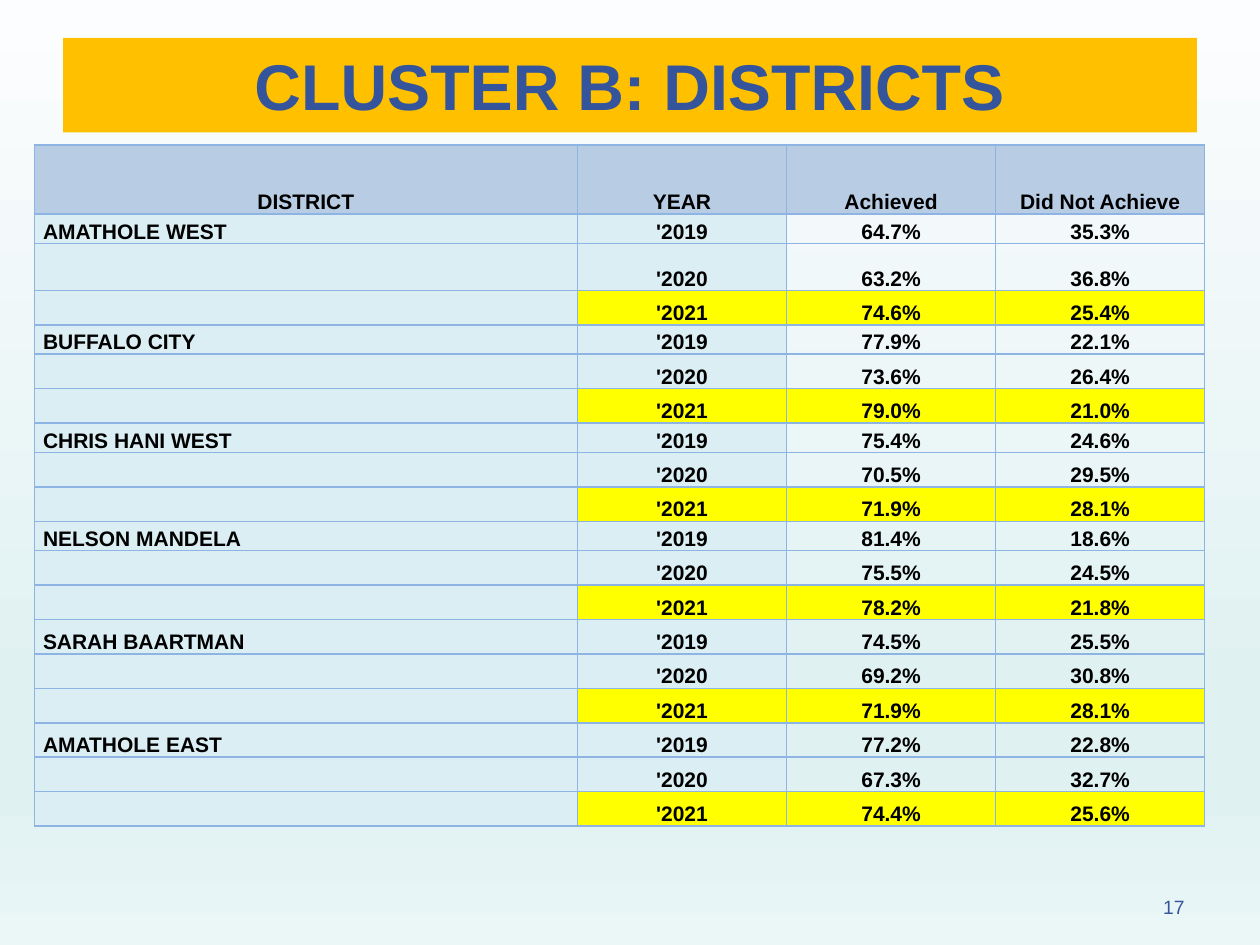
from dataclasses import dataclass
from typing import Optional

from pptx import Presentation
from pptx.dml.color import RGBColor
from pptx.enum.text import MSO_ANCHOR as Anchor, MSO_AUTO_SIZE as AutoSize, PP_ALIGN as Align
from pptx.oxml import parse_xml
from pptx.oxml.ns import nsdecls
from pptx.oxml.xmlchemy import OxmlElement
from pptx.util import Pt


@dataclass(frozen=True)
class Theme:
    font: str = "Arial"
    ink: str = "000000"
    accent: str = "34549C"
    banner: str = "FFC000"
    header: str = "B8CCE4"
    label: str = "DAEEF3"
    latest: str = "FFFF00"
    border: str = "8DB4E2"
    title_size: float = 36.9
    cell_size: float = 12
    number_size: float = 11
    backdrop: tuple = ((0, "FCFDFE"), (74, "E0F1F2"), (83, "E0F1F2"), (100, "EBF6F7"))


@dataclass(frozen=True)
class District:
    name: str
    achieved: tuple
    missed: tuple
    heights: tuple = (19.7, 19.7, 19.7)


THEME = Theme()
SHORT_FIRST = (16.8, 19.7, 19.7)
HEADINGS = ("DISTRICT", "YEAR", "Achieved", "Did Not Achieve")
YEARS = ("'2019", "'2020", "'2021")
COLUMN_WIDTHS = (310.4, 119.5, 119.5, 119.5)
HEADER_HEIGHT = 39.6
DISTRICTS = (
    District("AMATHOLE WEST", (64.7, 63.2, 74.6), (35.3, 36.8, 25.4), (16.8, 26.8, 19.7)),
    District("BUFFALO CITY", (77.9, 73.6, 79.0), (22.1, 26.4, 21.0), SHORT_FIRST),
    District("CHRIS HANI WEST", (75.4, 70.5, 71.9), (24.6, 29.5, 28.1), SHORT_FIRST),
    District("NELSON MANDELA", (81.4, 75.5, 78.2), (18.6, 24.5, 21.8), SHORT_FIRST),
    District("SARAH BAARTMAN", (74.5, 69.2, 71.9), (25.5, 30.8, 28.1)),
    District("AMATHOLE EAST", (77.2, 67.3, 74.4), (22.8, 32.7, 25.6)),
)


def write_text(frame, text: str, *, size: float, color: str = THEME.ink, bold: bool = False,
               align: Align = Align.CENTER, spacing: float = 1.0, after: float = 0) -> None:
    """Write one formatted paragraph into a text frame."""
    paragraph = frame.paragraphs[0]
    paragraph.alignment = align
    paragraph.line_spacing = spacing
    paragraph.space_after = Pt(after)
    if not text:
        ending = OxmlElement("a:endParaRPr")
        ending.set("sz", str(int(size * 100)))
        paragraph._p.append(ending)
        return
    run = paragraph.add_run()
    run.text = text
    run.font.name = THEME.font
    run.font.size = Pt(size)
    run.font.bold = bold
    run.font.color.rgb = RGBColor.from_string(color)


def paint_backdrop(slide) -> None:
    """Fill the slide background with the vertical gradient."""
    stops = "".join(f'<a:gs pos="{position * 1000}"><a:srgbClr val="{color}"/></a:gs>'
                    for position, color in THEME.backdrop)
    background = parse_xml(
        f'<p:bg {nsdecls("p", "a")}><p:bgPr><a:gradFill rotWithShape="1"><a:gsLst>{stops}</a:gsLst>'
        '<a:lin ang="5400000" scaled="0"/></a:gradFill><a:effectLst/></p:bgPr></p:bg>')
    slide.element.cSld.insert(0, background)


def add_title(slide, text: str) -> None:
    """Format the title placeholder as a banner."""
    title = slide.shapes.title
    title.left, title.top, title.width, title.height = Pt(36), Pt(21.6), Pt(648), Pt(54)
    title.fill.solid()
    title.fill.fore_color.rgb = RGBColor.from_string(THEME.banner)
    frame = title.text_frame
    frame.auto_size = AutoSize.NONE
    frame.vertical_anchor = Anchor.MIDDLE
    write_text(frame, text, size=THEME.title_size, color=THEME.accent, bold=True)


def format_cell(cell, text: str, fill: Optional[str], align: Align) -> None:
    """Write, border and fill one table cell."""
    cell.vertical_anchor = Anchor.BOTTOM
    cell.margin_left = cell.margin_right = Pt(5)
    cell.margin_top = cell.margin_bottom = Pt(0)
    write_text(cell.text_frame, text, size=THEME.cell_size, bold=True, align=align, spacing=1.07)
    properties = cell._tc.get_or_add_tcPr()
    for side in "LRTB":
        properties.append(parse_xml(
            f'<a:ln{side} {nsdecls("a")} w="{Pt(1)}"><a:solidFill>'
            f'<a:srgbClr val="{THEME.border}"/></a:solidFill></a:ln{side}>'))
    if fill:
        cell.fill.solid()
        cell.fill.fore_color.rgb = RGBColor.from_string(fill)
    else:
        cell.fill.background()


def add_results(slide) -> None:
    """Add the table of results by district and year."""
    rows = [(HEADINGS, (THEME.header,) * 4, HEADER_HEIGHT)]
    for district in DISTRICTS:
        for index, year in enumerate(YEARS):
            latest = year == YEARS[-1]
            year_fill, rate_fill = (THEME.latest,) * 2 if latest else (THEME.label, None)
            texts = (district.name if index == 0 else "", year,
                     f"{district.achieved[index]:.1f}%", f"{district.missed[index]:.1f}%")
            rows.append((texts, (THEME.label, year_fill, rate_fill, rate_fill),
                         district.heights[index]))
    total_height = sum(height for _, _, height in rows)
    results = slide.shapes.add_table(len(rows), len(HEADINGS), Pt(19.6), Pt(82.8),
                                     Pt(sum(COLUMN_WIDTHS)), Pt(total_height)).table
    results.first_row = results.horz_banding = False
    for column, width in zip(results.columns, COLUMN_WIDTHS):
        column.width = Pt(width)
    for row_index, (texts, fills, height) in enumerate(rows):
        results.rows[row_index].height = Pt(height)
        for column_index, (text, fill) in enumerate(zip(texts, fills)):
            align = Align.LEFT if row_index and not column_index else Align.CENTER
            format_cell(results.cell(row_index, column_index), text, fill, align)


def add_page_number(slide, number: str) -> None:
    """Add the page number at the lower right."""
    frame = slide.shapes.add_textbox(Pt(516), Pt(509.8), Pt(168), Pt(19.4)).text_frame
    frame.word_wrap = True
    write_text(frame, number, size=THEME.number_size, color=THEME.accent,
               align=Align.RIGHT, spacing=0.9, after=6)


def main() -> None:
    """Build and save the slide."""
    deck = Presentation()
    deck.slide_width, deck.slide_height = Pt(720), Pt(540)
    slide = deck.slides.add_slide(deck.slide_layouts[5])
    paint_backdrop(slide)
    add_title(slide, "CLUSTER B: DISTRICTS")
    add_page_number(slide, "17")
    add_results(slide)
    deck.save("out.pptx")


if __name__ == "__main__":
    main()
